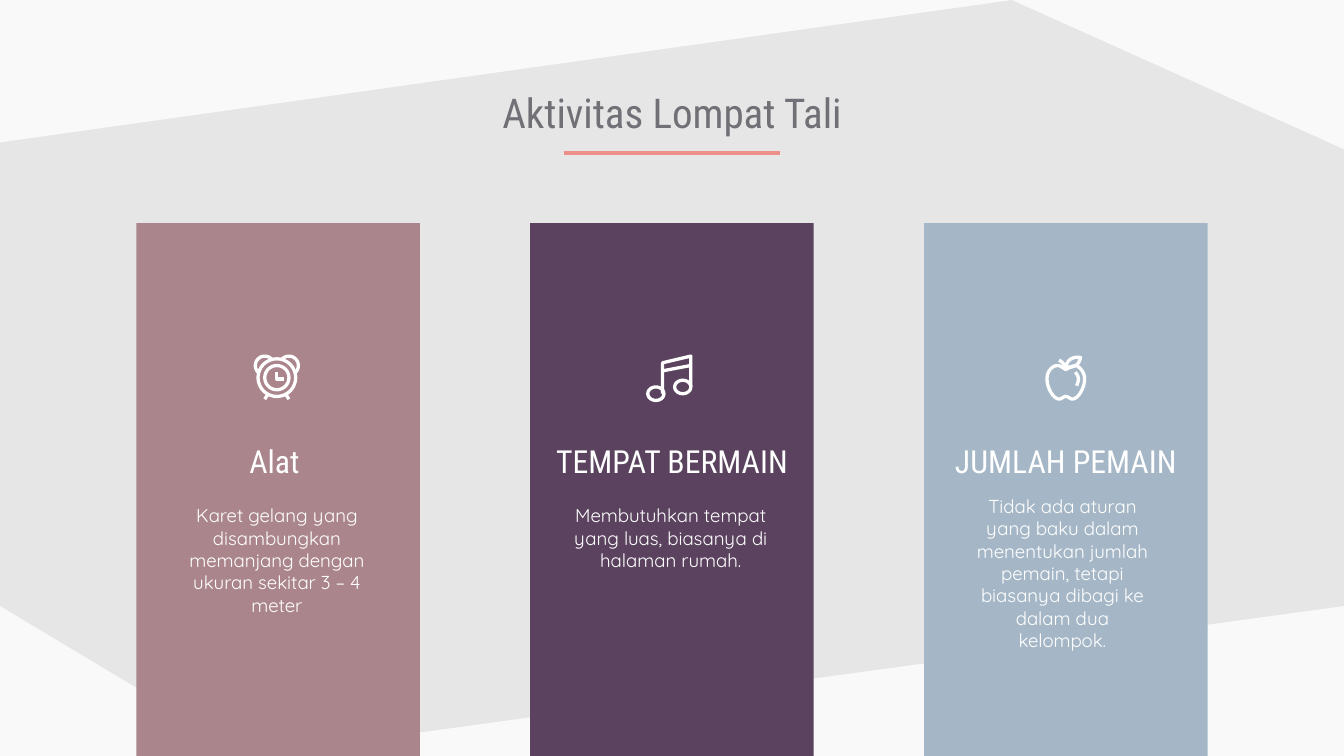
from math import cos, pi, sin

from lxml.etree import SubElement
from pptx import Presentation
from pptx.dml.color import RGBColor
from pptx.enum.shapes import MSO_CONNECTOR, MSO_SHAPE
from pptx.enum.text import MSO_ANCHOR, PP_ALIGN
from pptx.oxml.ns import qn
from pptx.util import Inches, Pt

WHITE = RGBColor(0xFF, 0xFF, 0xFF)
PALE = RGBColor(0xE6, 0xE6, 0xE6)
GREY = RGBColor(0x71, 0x70, 0x76)
CORAL = RGBColor(0xEE, 0x8E, 0x88)
ROSE = RGBColor(0xAA, 0x86, 0x8C)
PLUM = RGBColor(0x5B, 0x43, 0x5F)
STEEL = RGBColor(0xA5, 0xB7, 0xC6)
HEADING_FONT, BODY_FONT = "Roboto Condensed", "Quicksand"

WIDTH = 10
HEIGHT = WIDTH * 9 / 16
TITLE = "Aktivitas Lompat Tali"
# Heading, fill, body paragraphs, body left, body top, body indent
CARDS = [
    ("Alat ", ROSE,
     ["Karet gelang yang disambungkan memanjang dengan ukuran sekitar 3 – 4 meter"],
     1.29, 3.75, 0),
    ("TEMPAT BERMAIN", PLUM,
     ["Membutuhkan tempat yang luas, biasanya di halaman rumah."],
     4.22, 3.75, 0),
    ("JUMLAH PEMAIN", STEEL,
     ["Tidak ada aturan", "yang baku dalam", "menentukan jumlah", "pemain, tetapi",
      "biasanya dibagi ke", "dalam dua", "kelompok."],
     7.01, 3.68, 0.5),
]
CORNERS = [
    [(0, 0), (7.53, 0), (0, 1.06)],
    [(0, 4.51), (1.86, HEIGHT), (0, HEIGHT)],
    [(WIDTH, 4.51), (WIDTH, HEIGHT), (1.85, HEIGHT)],
    [(7.53, 0), (WIDTH, 0), (WIDTH, 1.11)],
]
CARD_WIDTH, CARD_TOP, CARD_STEP = 2.11, 1.66, 2.93
CARD_LEFT = (WIDTH - CARD_WIDTH) / 2 - CARD_STEP
HEADING_WIDTH = 2.71


def arc(x, y, rx, ry, first=0, last=2 * pi, steps=32):
    angles = [first + (last - first) * i / steps for i in range(steps + 1)]
    return [(x + rx * cos(a), y + ry * sin(a)) for a in angles]


def curve(start, *segments, steps=8):
    """Sample cubic segments given as (control, control, end)."""
    points = [start]
    for control, second, end in segments:
        begin = points[-1]
        for t in (i / steps for i in range(1, steps + 1)):
            weights = ((1 - t) ** 3, 3 * t * (1 - t) ** 2, 3 * t * t * (1 - t), t ** 3)
            points.append(tuple(sum(w * p[axis] for w, p in
                                    zip(weights, (begin, control, second, end)))
                                for axis in (0, 1)))
    return points


# Each icon is a list of strokes
CLOCK = [
    arc(2.06, 2.81, 0.09, 0.09),
    arc(2.06, 2.81, 0.14, 0.14),
    arc(1.97, 2.72, 0.07, 0.07, 0.75 * pi, 1.75 * pi),
    arc(2.15, 2.72, 0.07, 0.07, 1.25 * pi, 2.25 * pi),
    [(2.06, 2.77), (2.06, 2.82), (2.11, 2.82)],
    [(1.99, 2.94), (1.97, 2.97)],
    [(2.13, 2.94), (2.15, 2.97)],
]
NOTE = [
    arc(4.88, 2.93, 0.06, 0.05),
    arc(5.08, 2.88, 0.06, 0.05),
    [(4.93, 2.93), (4.93, 2.7), (5.14, 2.65), (5.14, 2.88)],
    [(4.93, 2.76), (5.14, 2.72)],
]
APPLE = [
    curve((7.93, 2.75), ((7.91, 2.74), (7.89, 2.72), (7.87, 2.72)),
          ((7.83, 2.72), (7.79, 2.76), (7.79, 2.82)),
          ((7.79, 2.89), (7.84, 2.97), (7.88, 2.97)),
          ((7.9, 2.97), (7.91, 2.95), (7.93, 2.95)),
          ((7.95, 2.95), (7.96, 2.97), (7.98, 2.97)),
          ((8.02, 2.97), (8.07, 2.89), (8.07, 2.82)),
          ((8.07, 2.77), (8.04, 2.74), (8.01, 2.72)),
          ((7.98, 2.72), (7.95, 2.74), (7.93, 2.75))),
    curve((7.93, 2.73), ((7.94, 2.68), (7.98, 2.65), (8.04, 2.66)),
          ((8.03, 2.71), (8, 2.74), (7.93, 2.73))),
    curve((7.88, 2.68), ((7.9, 2.69), (7.92, 2.71), (7.93, 2.74))),
    curve((8, 2.77), ((8.03, 2.8), (8.03, 2.83), (8.01, 2.87))),
]


def paint(shape, fill=None, line=None, weight=1.75, alpha=None):
    shape.shadow.inherit = False
    if fill is None:
        shape.fill.background()
    else:
        shape.fill.solid()
        shape.fill.fore_color.rgb = fill
    if alpha is not None:
        color = shape.fill._xPr.find(qn("a:solidFill"))[0]
        SubElement(color, qn("a:alpha")).set("val", str(alpha * 1000))
    if line is None:
        shape.line.fill.background()
    else:
        shape.line.color.rgb = line
        shape.line.width = Pt(weight)


def add_outline(page, strokes, close=False, **style):
    strokes = [[(Inches(x), Inches(y)) for x, y in stroke] for stroke in strokes]
    builder = page.shapes.build_freeform(*strokes[0][0], scale=1.0)
    for number, stroke in enumerate(strokes):
        if number:
            builder.move_to(*stroke[0])
        builder.add_line_segments(stroke[1:], close=close)
    paint(builder.convert_to_shape(), **style)


def add_text(page, lines, left, top, width, height, *, size, font,
             color=WHITE, anchor=MSO_ANCHOR.TOP, indent=0):
    box = page.shapes.add_textbox(Inches(left), Inches(top), Inches(width), Inches(height))
    frame = box.text_frame
    frame.word_wrap = True
    frame.vertical_anchor = anchor
    frame.margin_left = frame.margin_right = frame.margin_top = frame.margin_bottom = 0
    for number, line in enumerate(lines):
        para = frame.add_paragraph() if number else frame.paragraphs[0]
        para.alignment = PP_ALIGN.CENTER
        if indent:
            properties = para._p.get_or_add_pPr()
            properties.set("marL", str(Inches(indent)))
            properties.set("indent", str(-Inches(indent / 2)))
        span = para.add_run()
        span.text = line
        span.font.size = Pt(size)
        span.font.name = font
        span.font.color.rgb = color


def main():
    deck = Presentation()
    deck.slide_width, deck.slide_height = Inches(WIDTH), Inches(HEIGHT)
    page = deck.slides.add_slide(deck.slide_layouts[6])

    # Background with translucent corners
    page.background.fill.solid()
    page.background.fill.fore_color.rgb = PALE
    for corner in CORNERS:
        add_outline(page, [corner], close=True, fill=WHITE, alpha=78)

    # Title and underline
    add_text(page, [TITLE], 1.34, 0.65, 7.32, 0.3, size=22, font=HEADING_FONT, color=GREY)
    rule = page.shapes.add_connector(MSO_CONNECTOR.STRAIGHT, Inches(4.2), Inches(1.14),
                                     Inches(5.8), Inches(1.14))
    rule.line.color.rgb = CORAL
    rule.line.width = Pt(2)
    SubElement(rule._element.spPr, qn("a:effectLst"))

    # Cards
    for number, (heading, color, body, body_left, body_top, indent) in enumerate(CARDS):
        left = CARD_LEFT + number * CARD_STEP
        card = page.shapes.add_shape(MSO_SHAPE.RECTANGLE, Inches(left), Inches(CARD_TOP),
                                     Inches(CARD_WIDTH), Inches(HEIGHT - CARD_TOP))
        paint(card, fill=color)
        add_text(page, [heading], left + (CARD_WIDTH - HEADING_WIDTH) / 2, 2.91,
                 HEADING_WIDTH, 0.66, size=17, font=HEADING_FONT, anchor=MSO_ANCHOR.BOTTOM)
        add_text(page, body, body_left, body_top, 1.54, 0.47, size=10, font=BODY_FONT,
                 indent=indent)

    # Icons
    for icon in (CLOCK, NOTE, APPLE):
        add_outline(page, icon, line=WHITE)

    deck.save("out.pptx")


if __name__ == "__main__":
    main()
